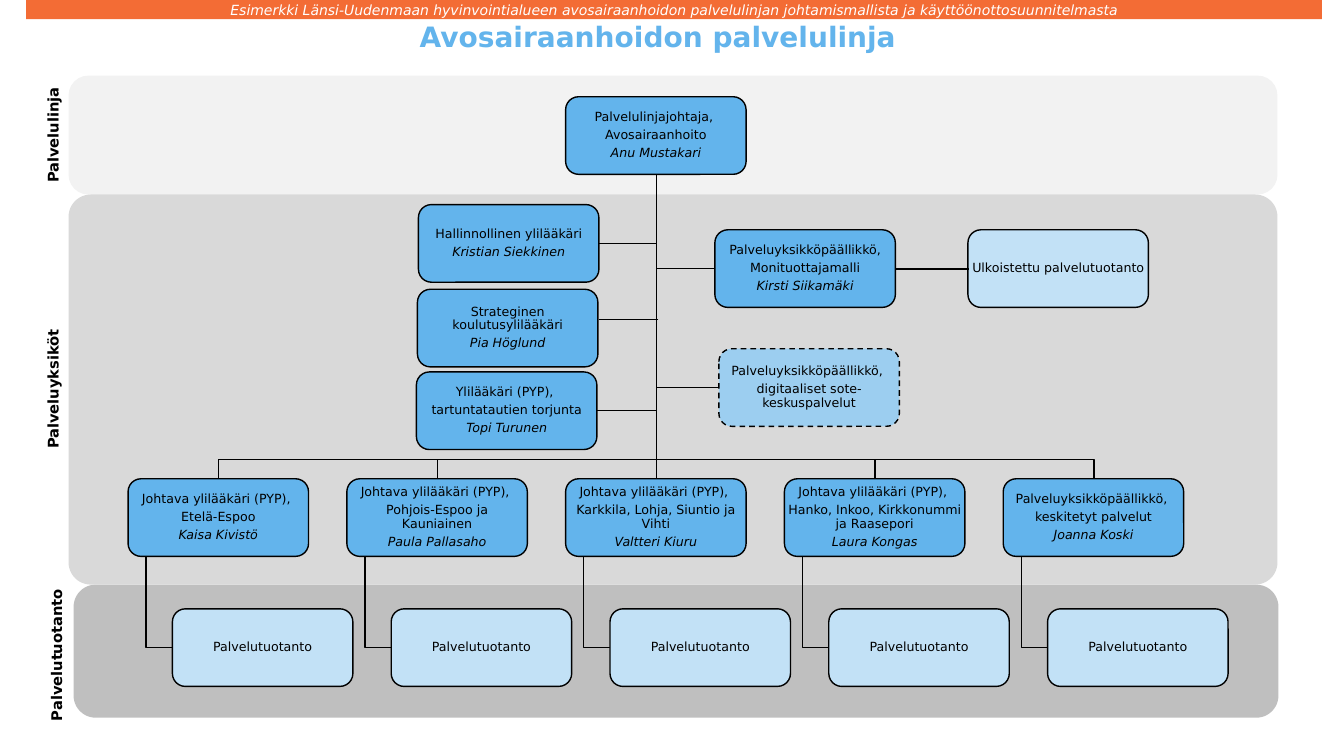
from pptx import Presentation
from pptx.dml.color import RGBColor
from pptx.enum.dml import MSO_LINE_DASH_STYLE as Dash
from pptx.enum.shapes import MSO_CONNECTOR_TYPE as Connector, MSO_SHAPE as Shape
from pptx.enum.text import MSO_ANCHOR as Anchor, PP_ALIGN as Align
from pptx.oxml.ns import qn
from pptx.util import Inches, Pt
from lxml.etree import SubElement

FONT = "DejaVu Sans"
BLACK, SKY, MIST, PALE = "000000", "63B4EC", "9CCEF0", "C2E1F6"
BOX_W, BOX_H = 1.79, 0.77
TRUNK_X, TRUNK_TOP, BUS_Y = 6.51, 1.73, 4.56
PITCH, UNIT_LEFT, UNIT_TOP, OUTPUT_TOP = 2.17, 1.27, 4.75, 6.04

BANDS = [
    (0.73, 5.8, 11.95, 1.32, "BFBFBF", 0.167),
    (0.68, 0.75, 11.99, 1.18, "F2F2F2", 0.167),
    (0.68, 1.93, 11.99, 3.87, "D9D9D9", 0.057),
]
LABELS = [
    ("Palvelulinja", 0.04, 1.25, 0.97),
    ("Palveluyksiköt", -0.08, 3.77, 1.21),
    ("Palvelutuotanto", -0.1, 6.41, 1.32),
]
UNITS = [
    ("Johtava ylilääkäri (PYP), ", "Etelä-Espoo", "Kaisa Kivistö"),
    ("Johtava ylilääkäri (PYP), ", "Pohjois-Espoo ja Kauniainen", "Paula Pallasaho"),
    ("Johtava ylilääkäri (PYP), ", "Karkkila, Lohja, Siuntio ja Vihti", "Valtteri Kiuru"),
    ("Johtava ylilääkäri (PYP), ", "Hanko, Inkoo, Kirkkonummi ja Raasepori", "Laura Kongas"),
    ("Palveluyksikköpäällikkö, ", "keskitetyt palvelut", "Joanna Koski"),
]
STAFF = [
    (4.15, 2.03, ["Hallinnollinen ylilääkäri"], "Kristian Siekkinen"),
    (7.09, 2.28, ["Palveluyksikköpäällikkö,", "Monituottajamalli"], "Kirsti Siikamäki"),
    (4.13, 3.69, ["Ylilääkäri (PYP), ", "tartuntatautien torjunta"], "Topi Turunen"),
    (7.13, 3.46, ["Palveluyksikköpäällikkö, ", "digitaaliset sote-keskuspalvelut"], None),
]


def rgb(value):
    """Turn a hex string into a colour."""
    return RGBColor.from_string(value)


def set_outline(shape):
    """Give a shape or line a thin black outline."""
    shape.line.color.rgb = rgb(BLACK)
    shape.line.width = Pt(1)


def add_line(page, x1, y1, x2, y2):
    """Draw a straight line."""
    line = page.shapes.add_connector(
        Connector.STRAIGHT, Inches(x1), Inches(y1), Inches(x2), Inches(y2))
    set_outline(line)
    SubElement(line._element.spPr, qn("a:effectLst"))


def add_elbow(page, *points):
    """Draw an open line with right-angled turns."""
    start, *turns = [(Inches(x), Inches(y)) for x, y in points]
    builder = page.shapes.build_freeform(*start)
    builder.add_line_segments(turns, close=False)
    elbow = builder.convert_to_shape()
    elbow.shadow.inherit = False
    elbow.fill.background()
    set_outline(elbow)


def add_panel(page, kind, left, top, width, height, fill):
    """Add a filled shape without outline or shadow."""
    panel = page.shapes.add_shape(
        kind, Inches(left), Inches(top), Inches(width), Inches(height))
    panel.shadow.inherit = False
    panel.fill.solid()
    panel.fill.fore_color.rgb = rgb(fill)
    panel.line.fill.background()
    return panel


def set_frame(frame, anchor=Anchor.MIDDLE, wrap=True):
    """Remove margins and set anchor and wrapping of a text frame."""
    frame.word_wrap = wrap
    frame.vertical_anchor = anchor
    frame.margin_left = frame.margin_right = 0
    frame.margin_top = frame.margin_bottom = 0


def write(para, text, size=9, color=BLACK, bold=False, italic=False):
    """Write centred text into a paragraph."""
    para.alignment = Align.CENTER
    span = para.add_run()
    span.text = text
    span.font.name = FONT
    span.font.size = Pt(size)
    span.font.color.rgb = rgb(color)
    span.font.bold = bold
    span.font.italic = italic


def add_box(page, left, top, lines, person=None, fill=SKY, dashed=False):
    """Add an organisation box with role lines and an italic name."""
    box = add_panel(page, Shape.ROUNDED_RECTANGLE, left, top, BOX_W, BOX_H, fill)
    set_outline(box)
    if dashed:
        box.line.dash_style = Dash.DASH
    frame = box.text_frame
    set_frame(frame)
    texts = [*lines, person] if person else lines
    for index, text in enumerate(texts):
        para = frame.add_paragraph() if index else frame.paragraphs[0]
        para.line_spacing = 0.9
        para.space_after = Pt(3.15)
        write(para, text, italic=text == person)


def add_text(page, text, left, top, width, height, rotation=0, wrap=True, **style):
    """Add a one-paragraph text box."""
    box = page.shapes.add_textbox(
        Inches(left), Inches(top), Inches(width), Inches(height))
    box.rotation = rotation
    set_frame(box.text_frame, anchor=Anchor.TOP, wrap=wrap)
    write(box.text_frame.paragraphs[0], text, **style)


def add_lines(page):
    """Connect the director, the staff boxes, the units and their output."""
    director = (TRUNK_X, TRUNK_TOP)
    for left, top, _, _ in STAFF:
        edge = left + BOX_W if left < TRUNK_X else left
        middle = top + BOX_H / 2
        add_elbow(page, director, (TRUNK_X, middle), (edge, middle))
    output_middle = OUTPUT_TOP + BOX_H / 2
    for index in range(len(UNITS)):
        stem = UNIT_LEFT + index * PITCH + 0.18
        center = PITCH * (index + 1)
        if index == len(UNITS) // 2:
            add_line(page, *director, TRUNK_X, UNIT_TOP)
        else:
            add_elbow(page, director, (TRUNK_X, BUS_Y), (center, BUS_Y), (center, UNIT_TOP))
        add_elbow(page, (stem, UNIT_TOP + BOX_H), (stem, output_middle),
                  (stem + 0.26, output_middle))


def add_boxes(page):
    """Add every box of the organisation chart."""
    add_box(page, 5.61, 0.96, ["Palvelulinjajohtaja, ", "Avosairaanhoito"], "Anu Mustakari")
    for index, (role, area, person) in enumerate(UNITS):
        left = UNIT_LEFT + index * PITCH
        add_box(page, left, UNIT_TOP, [role, area], person)
        add_box(page, left + 0.44, OUTPUT_TOP, ["Palvelutuotanto"], fill=PALE)
    for left, top, lines, person in STAFF:
        add_box(page, left, top, lines, person,
                fill=SKY if person else MIST, dashed=not person)
    add_box(page, 9.6, 2.28, ["Ulkoistettu palvelutuotanto"], fill=PALE)
    add_box(page, 4.14, 2.87, ["Strateginen koulutusylilääkäri"], "Pia Höglund")


def main():
    """Build the slide and save it."""
    deck = Presentation()
    deck.slide_width, deck.slide_height = Inches(13.33), Inches(7.5)
    page = deck.slides.add_slide(deck.slide_layouts[6])
    for left, top, width, height, fill, rounding in BANDS:
        band = add_panel(page, Shape.ROUNDED_RECTANGLE, left, top, width, height, fill)
        band.adjustments[0] = rounding
    add_lines(page)
    add_boxes(page)
    for text, left, top, width in LABELS:
        add_text(page, text, left, top, width, 0.18,
                 rotation=270, wrap=False, size=10.5, bold=True)
    add_text(page, "Avosairaanhoidon palvelulinja", 1.08, 0.19, 10.89, 0.45,
             size=20, color=SKY, bold=True)
    add_line(page, 9.61, 2.67, 8.88, 2.67)
    add_line(page, 6.53, 3.17, 5.94, 3.17)
    banner = add_panel(page, Shape.RECTANGLE, 0.26, 0, 12.85, 0.19, "F36C35")
    set_frame(banner.text_frame)
    write(banner.text_frame.paragraphs[0],
          "Esimerkki Länsi-Uudenmaan hyvinvointialueen avosairaanhoidon palvelulinjan "
          "johtamismallista ja käyttöönottosuunnitelmasta",
          size=10, color="FFFFFF", italic=True)
    deck.save("out.pptx")


if __name__ == "__main__":
    main()
